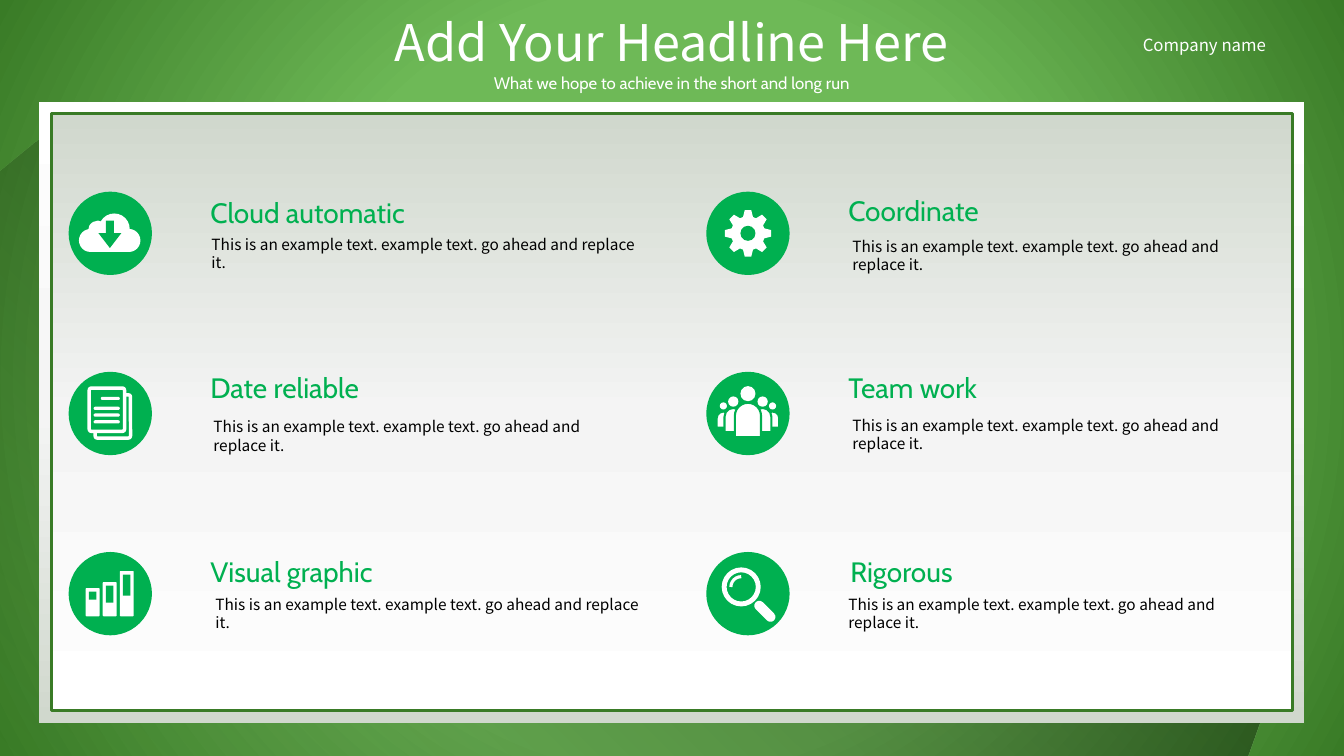
from dataclasses import dataclass
from math import cos, radians, sin

from lxml import etree
from pptx import Presentation
from pptx.dml.color import RGBColor
from pptx.enum.shapes import MSO_SHAPE as Shape
from pptx.enum.text import MSO_ANCHOR as Anchor, PP_ALIGN as Align
from pptx.oxml.ns import qn
from pptx.util import Cm, Pt


@dataclass(frozen=True)
class Theme:
    white: str = "FFFFFF"
    black: str = "000000"
    icon: str = "00B050"
    light_green: str = "6EB957"
    dark_green: str = "397B26"
    sans: str = "Noto Sans CJK SC"
    accent: str = "Cabin"
    title: int = 36
    heading: int = 20
    small: int = 12
    body: int = 11


THEME = Theme()
WHITE, GREEN = THEME.white, THEME.icon
PANEL_STOPS = [(0, WHITE, 100), (50, "F4F4F4", 100), (100, "D0D8CD", 100)]
SHADE_STOPS = [(0, THEME.black, 50), (100, THEME.black, 0)]
PAGE_STOPS = [(50, THEME.light_green, 100), (100, THEME.dark_green, 100)]
SHADE_OUTLINE = [(0.99, 3.51), (31.98, 17.48), (31.42, 19.05), (0, 19.05), (0, 4.32)]

TITLE = "Add Your Headline Here"
SUBTITLE = "What we hope to achieve in the short and long run"
COMPANY = "Company name"
EXAMPLE = "This is an example text. example text. go ahead and replace it."

# column, row, icon, heading, heading (left, top), body (left, top, width)
FEATURES = [
    (0, 0, "cloud", "Cloud automatic", (5.05, 4.8), (5.08, 5.79, 11.35)),
    (0, 1, "document", "Date reliable", (5.05, 9.22), (5.13, 10.39, 10.97)),
    (0, 2, "bars", "Visual graphic", (5.05, 13.84), (5.18, 14.86, 11.28)),
    (1, 0, "gear", "Coordinate", (21.13, 4.75), (21.23, 5.84, 10.92)),
    (1, 1, "team", "Team work", (21.13, 9.22), (21.23, 10.36, 10.92)),
    (1, 2, "magnifier", "Rigorous", (21.18, 13.84), (21.13, 14.86, 10.92)),
]
COLUMN_CENTERS = (2.78, 18.85)
FIRST_ROW, ROW_PITCH, BADGE = 5.88, 4.54, 2.1


def part(kind, left, top, width, height, **style):
    """Describe one icon part, in cm from the centre of its badge."""
    return kind, (left, top, width, height), {"fill": WHITE, **style}


def disc(x, y, radius, **style):
    return part(Shape.OVAL, x - radius, y - radius, 2 * radius, 2 * radius, **style)


def bars():
    parts = []
    for index, (top, window) in enumerate([(-0.14, 0.2), (-0.29, 0.43), (-0.57, 0.53)]):
        left = -0.62 + 0.43 * index
        parts += [part(Shape.ROUNDED_RECTANGLE, left, top, 0.35, 0.57 - top, adjust=[0.06]),
                  part(Shape.RECTANGLE, left + 0.08, top + 0.09, 0.19, window, fill=GREEN)]
    return parts


def team():
    """People from the outermost pair to the one in front."""
    parts = []
    for offset, head_y, radius, half, top, bottom in [
            (0.62, -0.19, 0.09, 0.17, -0.05, 0.36),
            (0.37, -0.3, 0.13, 0.22, -0.14, 0.47),
            (0, -0.5, 0.19, 0.33, -0.27, 0.6)]:
        for x in sorted({-offset, offset}):
            parts += [part(Shape.ROUND_2_SAME_RECTANGLE, x - half, top, 2 * half,
                           bottom - top, adjust=[0.5, 0], line=GREEN, weight=1.5),
                      disc(x, head_y, radius)]
    return parts


def page(left, top):
    return part(Shape.ROUNDED_RECTANGLE, left, top, 0.89, 1.09, fill=GREEN,
                line=WHITE, weight=2.5, adjust=[0.06])


def text_line(left, top, width):
    return part(Shape.ROUNDED_RECTANGLE, left, top, width, 0.08, adjust=[0.5])


ICONS = {
    "cloud": [
        part(Shape.ROUNDED_RECTANGLE, -0.79, -0.11, 1.55, 0.58, adjust=[0.5]),
        disc(0.1, -0.11, 0.39),
        disc(-0.31, -0.07, 0.25),
        part(Shape.DOWN_ARROW, -0.3, -0.32, 0.58, 0.69, fill=GREEN, adjust=[0.35, 0.65]),
    ],
    "document": [page(-0.38, -0.47), page(-0.53, -0.64), text_line(-0.24, -0.42, 0.48)]
    + [text_line(-0.42, -0.17 + 0.17 * index, 0.66) for index in range(3)],
    "bars": bars(),
    "gear": [disc(0, 0, 0.19, fill=GREEN)],
    "team": team(),
    "magnifier": [
        part(Shape.ROUNDED_RECTANGLE, 0.1, 0.32, 0.65, 0.25, adjust=[0.5], rotation=45),
        disc(-0.17, -0.17, 0.43, fill=None, line=WHITE, weight=3.5),
        part(Shape.ARC, -0.43, -0.43, 0.52, 0.52, fill=None, line=WHITE, weight=2.25,
             rotation=270),
    ],
}


def gradient(properties, stops, angle=None):
    """Replace the fill by a gradient; without an angle it is circular."""
    old_fill = properties.find(qn("a:gradFill"))
    fill = etree.Element(qn("a:gradFill"), rotWithShape="1")
    stop_list = etree.SubElement(fill, qn("a:gsLst"))
    for position, color, opacity in stops:
        stop = etree.SubElement(stop_list, qn("a:gs"), pos=str(position * 1000))
        rgb = etree.SubElement(stop, qn("a:srgbClr"), val=color)
        if opacity < 100:
            etree.SubElement(rgb, qn("a:alpha"), val=str(opacity * 1000))
    if angle is None:
        path = etree.SubElement(fill, qn("a:path"), path="circle")
        etree.SubElement(path, qn("a:fillToRect"), l="50000", t="50000", r="50000", b="50000")
    else:
        etree.SubElement(fill, qn("a:lin"), ang=str(angle * 60000), scaled="0")
    properties.replace(old_fill, fill)


def style_shape(shape, fill=None, line=None, weight=1, adjust=(), rotation=0,
                stops=None, angle=0):
    shape.shadow.inherit = False
    shape.rotation = rotation
    for index, value in enumerate(adjust):
        shape.adjustments[index] = value
    if stops:
        shape.fill.gradient()
        gradient(shape.fill._xPr, stops, angle)
    elif fill:
        shape.fill.solid()
        shape.fill.fore_color.rgb = RGBColor.from_string(fill)
    else:
        shape.fill.background()
    if line:
        shape.line.color.rgb = RGBColor.from_string(line)
        shape.line.width = Pt(weight)
    else:
        shape.line.fill.background()


def add_shape(shapes, kind, box, **style):
    style_shape(shapes.add_shape(kind, *map(Cm, box)), **style)


def add_outline(shapes, points, **style):
    corners = [(Cm(x), Cm(y)) for x, y in points]
    builder = shapes.build_freeform(*corners[0])
    builder.add_line_segments(corners[1:], close=True)
    style_shape(builder.convert_to_shape(), **style)


def write(shape, text, box, size, font=THEME.sans, color=WHITE, align=Align.LEFT,
          anchor=Anchor.TOP, wrap=False, spacing=None):
    shape.left, shape.top, shape.width, shape.height = map(Cm, box)
    frame = shape.text_frame
    frame.word_wrap, frame.vertical_anchor = wrap, anchor
    frame.text = text
    paragraph = frame.paragraphs[0]
    paragraph.alignment, paragraph.line_spacing = align, spacing
    paragraph.font.size, paragraph.font.name = Pt(size), font
    paragraph.font.color.rgb = RGBColor.from_string(color)


def add_text(slide, text, box, size, **style):
    write(slide.shapes.add_textbox(0, 0, 0, 0), text, box, size, **style)


def add_icon(slide, name, x, y):
    shapes = slide.shapes.add_group_shape().shapes
    add_shape(shapes, Shape.OVAL, (x - BADGE / 2, y - BADGE / 2, BADGE, BADGE), fill=GREEN)
    if name == "gear":
        teeth = [(x + radius * cos(radians(turn + offset)), y + radius * sin(radians(turn + offset)))
                 for turn in range(0, 360, 45)
                 for offset, radius in [(-17, 0.43), (-8, 0.59), (8, 0.59), (17, 0.43)]]
        add_outline(shapes, teeth, fill=WHITE)
    for kind, (left, top, width, height), style in ICONS[name]:
        add_shape(shapes, kind, (x + left, y + top, width, height), **style)


def main():
    presentation = Presentation()
    presentation.slide_width, presentation.slide_height = Cm(33.87), Cm(19.05)
    slide = presentation.slides.add_slide(presentation.slide_layouts[5])
    background = slide.background.fill
    background.gradient()
    gradient(background._xPr, PAGE_STOPS)

    add_outline(slide.shapes, SHADE_OUTLINE, stops=SHADE_STOPS, angle=135)
    add_shape(slide.shapes, Shape.RECTANGLE, (0.99, 2.57, 31.88, 15.65),
              stops=PANEL_STOPS, angle=90)
    add_shape(slide.shapes, Shape.RECTANGLE, (1.3, 2.87, 31.27, 15.04),
              stops=PANEL_STOPS, angle=270, line=THEME.dark_green, weight=2.25)

    write(slide.shapes.title, TITLE, (9.19, 0.13, 15.47, 1.8), THEME.title,
          align=Align.CENTER, anchor=Anchor.MIDDLE)
    add_text(slide, SUBTITLE, (12.12, 1.65, 9.63, 0.81), THEME.small,
             font=THEME.accent, align=Align.CENTER, spacing=1.1)
    add_text(slide, COMPANY, (28.55, 0.74, 3.96, 0.76), THEME.small, anchor=Anchor.MIDDLE)

    for column, row, icon, heading, heading_at, (left, top, width) in FEATURES:
        add_icon(slide, icon, COLUMN_CENTERS[column], FIRST_ROW + ROW_PITCH * row)
        add_text(slide, heading, (*heading_at, 6.02, 1.12), THEME.heading,
                 font=THEME.accent, color=GREEN, wrap=True)
        add_text(slide, EXAMPLE, (left, top, width, 1.19), THEME.body,
                 color=THEME.black, wrap=True)
    presentation.save("out.pptx")


if __name__ == "__main__":
    main()
